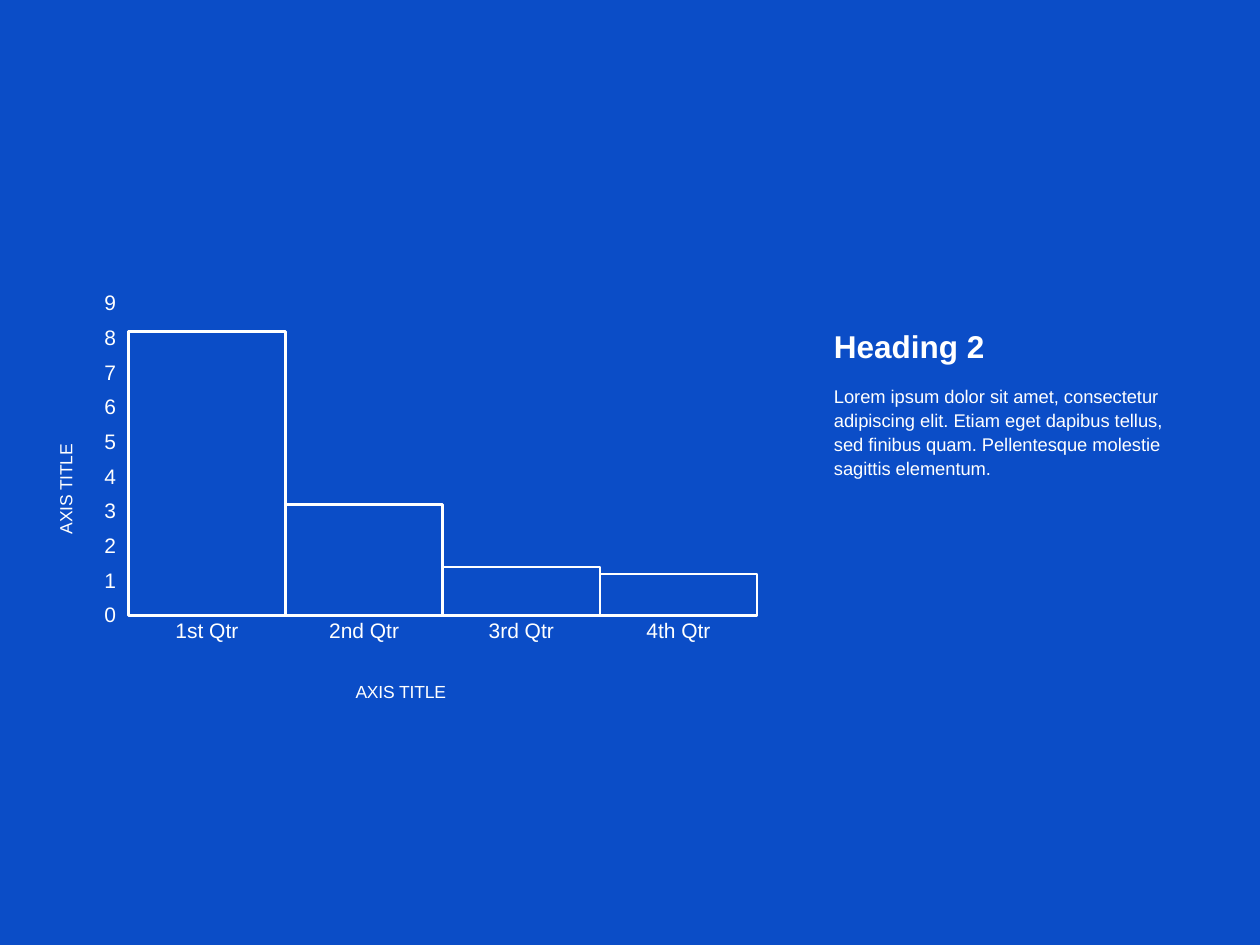
from pptx import Presentation
from pptx.chart.data import CategoryChartData
from pptx.dml.color import RGBColor
from pptx.enum.chart import XL_CHART_TYPE, XL_TICK_MARK
from pptx.oxml import parse_xml
from pptx.oxml.ns import nsdecls, qn
from pptx.util import Inches, Pt

BLUE = "0B4DC7"
WHITE = "FFFFFF"
GREY = "D9D9D9"


def color(code):
    return RGBColor.from_string(code)


def place(node, index, inner=False, **parts):
    """Give a chart node a manual layout, in fractions of the chart."""
    old = node.find(qn("c:layout"))
    if old is not None:
        node.remove(old)
    body = '<c:layoutTarget val="inner"/>' if inner else ""
    body += '<c:xMode val="edge"/><c:yMode val="edge"/>'
    body += "".join(f'<c:{key} val="{val}"/>' for key, val in parts.items())
    node.insert(index, parse_xml(
        f'<c:layout {nsdecls("c")}><c:manualLayout>{body}'
        "</c:manualLayout></c:layout>"))


class Deck:
    """Holds the style and the current slide."""
    face = "Arial"
    ink = WHITE

    def __init__(self, width, height):
        self.show = Presentation()
        self.show.slide_width = Inches(width)
        self.show.slide_height = Inches(height)
        self.slide = self.show.slides.add_slide(self.show.slide_layouts[6])
        fill = self.slide.background.fill
        fill.solid()
        fill.fore_color.rgb = color(BLUE)

    def style(self, font, size, bold=False):
        font.name = self.face
        font.size = Pt(size)
        font.bold = bold
        font.color.rgb = color(self.ink)

    def text(self, box, items):
        """Add a text box; items are (words, size, bold, line spacing)."""
        shape = self.slide.shapes.add_textbox(*map(Inches, box))
        frame = shape.text_frame
        frame.word_wrap = True
        for i, (words, size, bold, space) in enumerate(items):
            para = frame.add_paragraph() if i else frame.paragraphs[0]
            para.line_spacing = space
            if i:
                para.space_before = Pt(10)
            run = para.add_run()
            run.text = words
            self.style(run.font, size, bold)

    def axis(self, axis, words, x, y):
        axis.has_major_gridlines = False
        axis.minor_tick_mark = XL_TICK_MARK.NONE
        self.style(axis.tick_labels.font, 12)
        title = axis.axis_title
        run = title.text_frame.paragraphs[0].add_run()
        run.text = words
        self.style(run.font, 10)
        place(title._element, 1, x=x, y=y)

    def chart(self, box, cats, name, vals):
        data = CategoryChartData()
        data.categories = cats
        data.add_series(name, vals)
        chart = self.slide.shapes.add_chart(
            XL_CHART_TYPE.COLUMN_CLUSTERED, *map(Inches, box), data).chart
        chart.has_title = False
        chart.has_legend = False
        self.style(chart.font, 10)

        plot = chart.plots[0]
        plot.gap_width = 0
        plot.vary_by_categories = False
        bars = plot.series[0].format
        bars.fill.solid()
        bars.fill.fore_color.rgb = color(BLUE)
        bars.line.color.rgb = color(self.ink)
        bars.line.width = Pt(1.5)

        base, scale = chart.category_axis, chart.value_axis
        self.axis(base, "AXIS TITLE", 0.43, 0.93)
        base.major_tick_mark = XL_TICK_MARK.NONE
        base.format.line.color.rgb = color(GREY)
        base.format.line.width = Pt(0.75)
        self.axis(scale, "AXIS TITLE", 0.02, 0.37)
        turn = scale.axis_title.text_frame._txBody.bodyPr
        turn.set("rot", "-5400000")
        turn.set("vert", "horz")
        scale.minimum_scale, scale.maximum_scale = 0, 9
        scale.major_unit = 1
        scale.major_tick_mark = XL_TICK_MARK.OUTSIDE
        scale.format.line.fill.background()
        area = chart._chartSpace.chart.plotArea
        place(area, 0, inner=True, x=0.125, y=0.045, w=0.856, h=0.738)


def main():
    deck = Deck(10, 7.5)
    deck.chart((0.29, 2.26, 5.83, 3.36),
               ["1st Qtr", "2nd Qtr", "3rd Qtr", "4th Qtr"],
               "Series 1", (8.2, 3.2, 1.4, 1.2))
    deck.text((6.52, 2.58, 3.01, 1.98), [
        ("Heading 2", 18, True, 0.9),
        ("Lorem ipsum dolor sit amet, consectetur adipiscing elit. "
         "Etiam eget dapibus tellus, sed finibus quam. "
         "Pellentesque molestie sagittis elementum.", 10.5, False, 1.1),
    ])
    deck.show.save("out.pptx")


if __name__ == "__main__":
    main()
